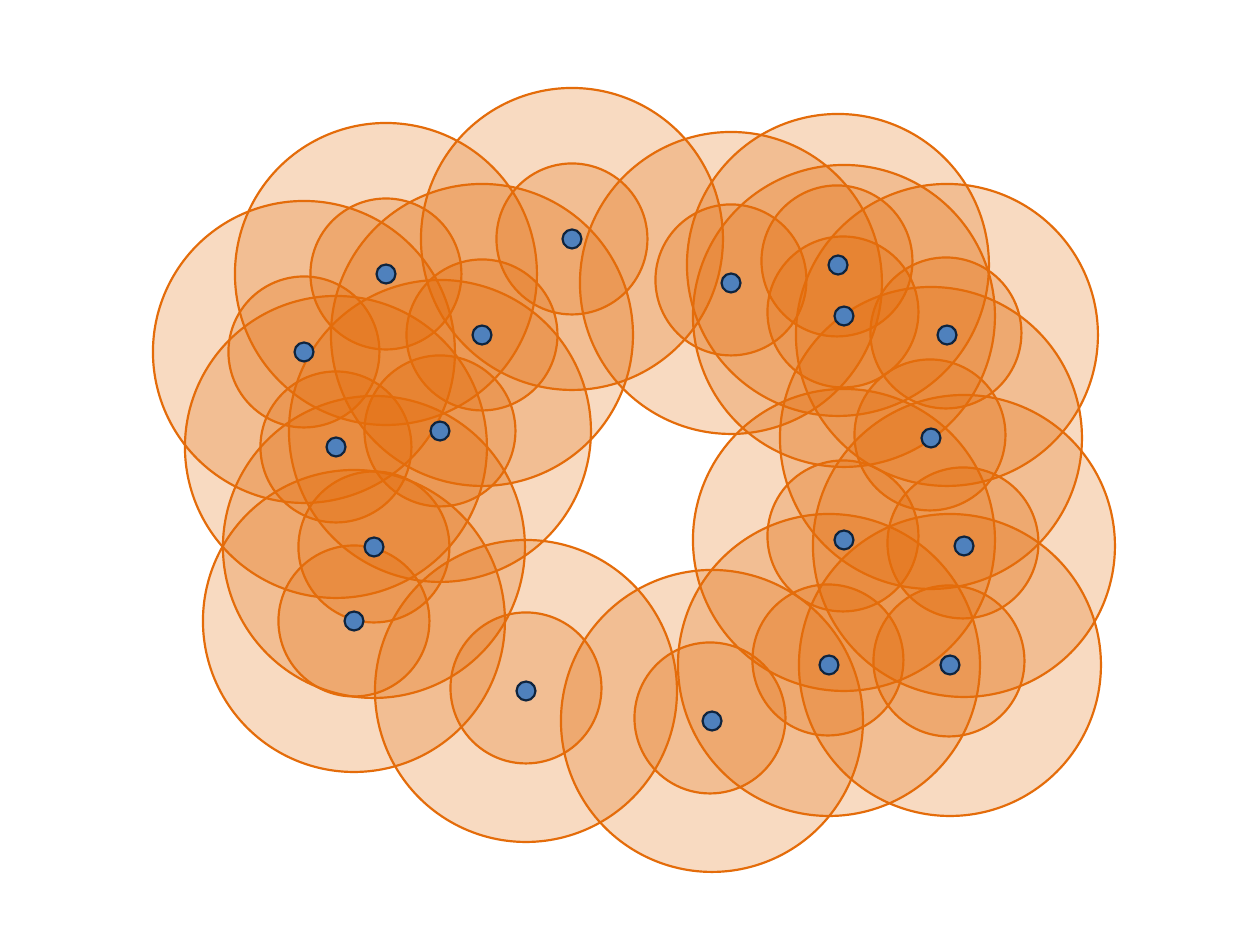
from dataclasses import dataclass
from typing import Any

from lxml import etree
from pptx import Presentation
from pptx import util as u
from pptx.dml.color import RGBColor
from pptx.enum import shapes as sh
from pptx.oxml import ns

PX = 914400 / 126
WIDE, HIGH = 1260, 945

ORANGE = RGBColor(0xE4, 0x6C, 0x0A)
BLUE = RGBColor(0x4F, 0x81, 0xBD)
NAVY = RGBColor(0x0F, 0x24, 0x3E)


@dataclass(frozen=True)
class Node:
    x: int
    y: int
    rank: int
    dx: int = 0
    dy: int = 0


@dataclass(frozen=True)
class Style:
    size: int
    fill: RGBColor
    line: RGBColor
    alpha: int = 100


OUTER = Style(302, ORANGE, ORANGE, 25)
INNER = Style(151, ORANGE, ORANGE, 25)
DOT = Style(19, BLUE, NAVY)

NODES = [
    Node(304, 352, 11),
    Node(482, 335, 15),
    Node(572, 239, 5),
    Node(731, 283, 4, 0, -3),
    Node(838, 265, 3, -1, -4),
    Node(964, 546, 17, -1, -3),
    Node(829, 665, 10, -1, -5),
    Node(712, 721, 6, -2, -3),
    Node(526, 691, 12, 0, -3),
    Node(354, 621, 7),
    Node(336, 447, 9),
    Node(844, 540, 16, -1, -4),
    Node(374, 547, 13),
    Node(931, 438, 1, -1, -3),
    Node(844, 316, 2, -1, -4),
    Node(950, 665, 18, -1, -4),
    Node(440, 431, 8),
    Node(386, 274, 14),
    Node(947, 335, 0, -1, -2),
]


def emu(px: float) -> int:
    return round(px * PX)


def disc(slide: Any, x: int, y: int, style: Style) -> None:
    half = style.size / 2
    size = emu(style.size)
    oval = slide.shapes.add_shape(
        sh.MSO_SHAPE.OVAL, emu(x - half), emu(y - half), size, size
    )
    oval.shadow.inherit = False
    oval.fill.solid()
    looks = {
        oval.fill.fore_color: {"rgb": style.fill},
        oval.line.color: {"rgb": style.line},
        oval.line: {"width": u.Pt(1.25)},
    }
    for part, vals in looks.items():
        for name, val in vals.items():
            setattr(part, name, val)
    if style.alpha < 100:
        tint = oval.fill._xPr.find(ns.qn("a:solidFill"))[0]
        etree.SubElement(tint, ns.qn("a:alpha"), val=str(style.alpha * 1000))


def main() -> None:
    deck = Presentation()
    deck.slide_width, deck.slide_height = emu(WIDE), emu(HIGH)
    slide = deck.slides.add_slide(deck.slide_layouts[6])
    for node in sorted(NODES, key=lambda n: n.rank):
        disc(slide, node.x + node.dx, node.y + node.dy, INNER)
    for style in (OUTER, DOT):
        for node in NODES:
            disc(slide, node.x, node.y, style)
    deck.save("out.pptx")


if __name__ == "__main__":
    main()
